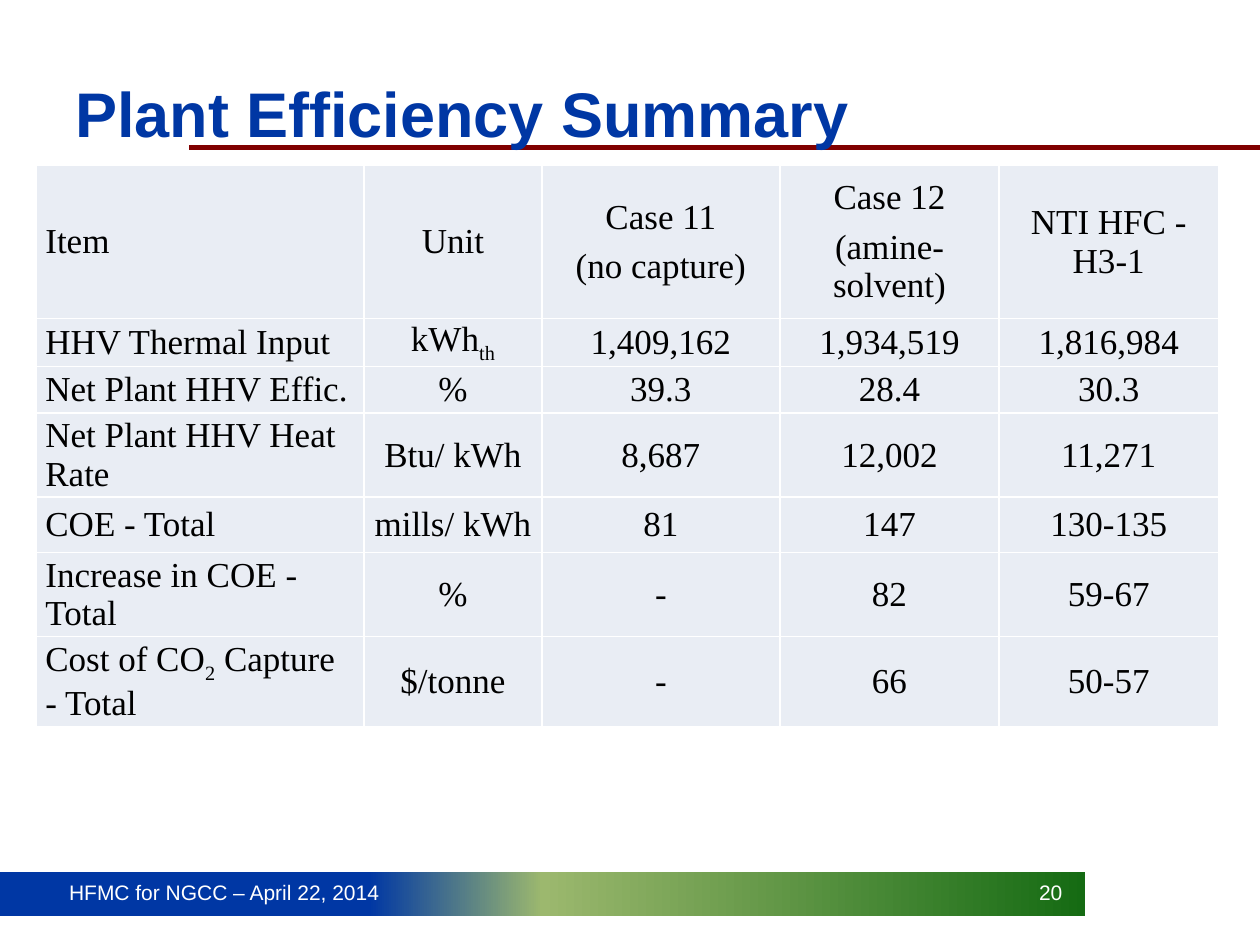
from copy import deepcopy
from dataclasses import dataclass

from lxml.etree import SubElement
from pptx import Presentation
from pptx.dml.color import RGBColor
from pptx.enum.shapes import MSO_CONNECTOR, MSO_SHAPE
from pptx.enum.text import MSO_ANCHOR, PP_ALIGN
from pptx.oxml import parse_xml
from pptx.oxml.ns import nsdecls, qn
from pptx.slide import Slide
from pptx.table import _Cell
from pptx.util import Inches, Pt


@dataclass(frozen=True)
class Theme:
    blue: str = "0037A4"
    light_green: str = "9CB86E"
    dark_green: str = "156B13"
    rule: str = "800000"
    white: str = "FFFFFF"
    black: str = "000000"
    cell: str = "E9EDF4"
    heading_font: str = "Arial"
    table_font: str = "Times New Roman"
    title_size: int = 36
    table_size: int = 20
    footer_size: int = 12


@dataclass(frozen=True)
class Label:
    text: str
    left: float
    top: float
    width: float
    height: float
    size: int
    color: str
    bold: bool = False
    align: PP_ALIGN = PP_ALIGN.LEFT
    anchor: MSO_ANCHOR = MSO_ANCHOR.TOP
    line_spacing: float | None = None


THEME = Theme()

LABELS = [
    Label("20", 6.2, 6.93, 2.33, 0.42, THEME.footer_size, THEME.white, align=PP_ALIGN.RIGHT),
    Label("HFMC for NGCC – April 22, 2014", 0.45, 6.93, 7.71, 0.4, THEME.footer_size, THEME.white),
    Label("Plant Efficiency Summary", 0.5, 0.3, 9, 1.25, THEME.title_size, THEME.blue,
          bold=True, anchor=MSO_ANCHOR.MIDDLE, line_spacing=38),
]

# A newline starts a paragraph; text between tildes is subscript.
ROWS = [
    ["Item", "Unit", "Case 11\n(no capture)", "Case 12\n(amine-solvent)", "NTI HFC - H3-1"],
    ["HHV Thermal Input", "kWh~th~", "1,409,162", "1,934,519", "1,816,984"],
    ["Net Plant HHV Effic.", "%", "39.3", "28.4", "30.3"],
    ["Net Plant HHV Heat Rate", "Btu/ kWh", "8,687", "12,002", "11,271"],
    ["COE - Total", "mills/ kWh", "81", "147", "130-135"],
    ["Increase in COE - Total", "%", "-", "82", "59-67"],
    ["Cost of CO~2~ Capture - Total", "$/tonne", "-", "66", "50-57"],
]
COLUMN_WIDTHS = [2.6, 1.41, 1.89, 1.74, 1.74]
ROW_HEIGHTS = [1.22, 0.37, 0.37, 0.62, 0.44, 0.62, 0.66]


def rgb(color: str) -> RGBColor:
    return RGBColor.from_string(color)


def add_footer_bar(slide: Slide) -> None:
    bar = slide.shapes.add_shape(
        MSO_SHAPE.RECTANGLE, Inches(0), Inches(6.92), Inches(8.61), Inches(0.35))
    bar.shadow.inherit = False
    bar.line.fill.background()
    bar.fill.gradient()
    bar.fill.gradient_angle = 0
    stop_list = bar._element.spPr.find(qn("a:gradFill")).find(qn("a:gsLst"))
    stop_list.append(deepcopy(stop_list[-1]))
    colors = [(0.34, THEME.blue), (0.5, THEME.light_green), (1, THEME.dark_green)]
    for stop, (position, color) in zip(bar.fill.gradient_stops, colors):
        stop.position = position
        stop.color.rgb = rgb(color)


def add_title_rule(slide: Slide) -> None:
    rule = slide.shapes.add_connector(
        MSO_CONNECTOR.STRAIGHT, Inches(1.5), Inches(1.17), Inches(10), Inches(1.17))
    rule.line.color.rgb = rgb(THEME.rule)
    rule.line.width = Pt(3)
    SubElement(rule._element.spPr, qn("a:effectLst"))


def add_label(slide: Slide, label: Label) -> None:
    box = slide.shapes.add_textbox(
        Inches(label.left), Inches(label.top), Inches(label.width), Inches(label.height))
    frame = box.text_frame
    frame.word_wrap = True
    frame.vertical_anchor = label.anchor
    paragraph = frame.paragraphs[0]
    paragraph.text = label.text
    paragraph.alignment = label.align
    if label.line_spacing:
        paragraph.line_spacing = Pt(label.line_spacing)
    font = paragraph.font
    font.name, font.size, font.bold = THEME.heading_font, Pt(label.size), label.bold
    font.color.rgb = rgb(label.color)


def set_borders(cell: _Cell) -> None:
    properties = cell._tc.get_or_add_tcPr()
    for side in ("lnL", "lnR", "lnT", "lnB"):
        properties.append(parse_xml(
            f'<a:{side} {nsdecls("a")} w="{Pt(1)}"><a:solidFill>'
            f'<a:srgbClr val="{THEME.white}"/></a:solidFill></a:{side}>'))


def fill_cell(cell: _Cell, text: str, align: PP_ALIGN) -> None:
    set_borders(cell)
    cell.fill.solid()
    cell.fill.fore_color.rgb = rgb(THEME.cell)
    cell.vertical_anchor = MSO_ANCHOR.MIDDLE
    cell.margin_left = cell.margin_right = Inches(0.07)
    cell.margin_top = cell.margin_bottom = 0
    frame = cell.text_frame
    for index, line in enumerate(text.split("\n")):
        paragraph = frame.add_paragraph() if index else frame.paragraphs[0]
        paragraph.alignment = align
        paragraph.space_before = Pt(3 if index else 0)
        paragraph.space_after = Pt(3)
        font = paragraph.font
        font.name, font.size = THEME.table_font, Pt(THEME.table_size)
        font.color.rgb = rgb(THEME.black)
        for part, piece in enumerate(line.split("~")):
            if piece:
                run = paragraph.add_run()
                run.text = piece
                if part % 2:
                    run._r.get_or_add_rPr().set("baseline", "-25000")


def add_efficiency_table(slide: Slide) -> None:
    table = slide.shapes.add_table(
        len(ROWS), len(COLUMN_WIDTHS), Inches(0.29), Inches(1.31),
        Inches(sum(COLUMN_WIDTHS)), Inches(sum(ROW_HEIGHTS))).table
    table.first_row = table.horz_banding = False
    for column, width in zip(table.columns, COLUMN_WIDTHS):
        column.width = Inches(width)
    for row, height, texts in zip(table.rows, ROW_HEIGHTS, ROWS):
        row.height = Inches(height)
        for index, (cell, text) in enumerate(zip(row.cells, texts)):
            fill_cell(cell, text, PP_ALIGN.CENTER if index else PP_ALIGN.LEFT)


def main() -> None:
    presentation = Presentation()
    presentation.slide_width = Inches(10)
    presentation.slide_height = Inches(7.5)
    slide = presentation.slides.add_slide(presentation.slide_layouts[6])
    add_footer_bar(slide)
    add_title_rule(slide)
    for label in LABELS:
        add_label(slide, label)
    add_efficiency_table(slide)
    presentation.save("out.pptx")


if __name__ == "__main__":
    main()
